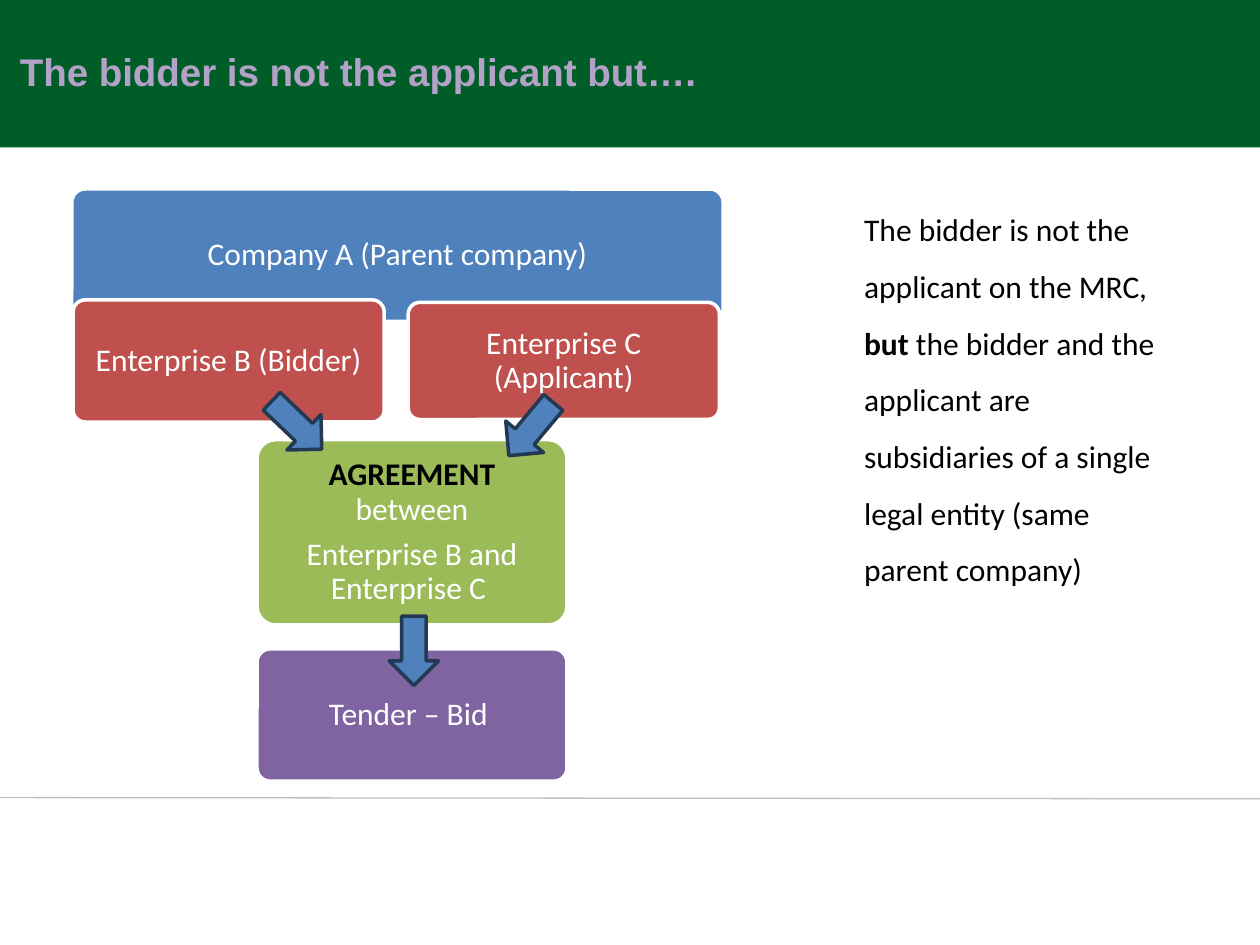
from dataclasses import dataclass

from lxml import etree
from pptx import Presentation
from pptx.dml.color import RGBColor
from pptx.enum.shapes import MSO_CONNECTOR, MSO_SHAPE
from pptx.enum.text import MSO_ANCHOR, MSO_AUTO_SIZE, PP_ALIGN
from pptx.oxml.ns import qn
from pptx.util import Inches, Pt


@dataclass(frozen=True)
class Theme:
    banner: str = "005D28"
    title: str = "B3A2C7"
    rule: str = "BFBFBF"
    black: str = "000000"
    white: str = "FFFFFF"
    parent: str = "4F81BD"
    enterprise: str = "C0504D"
    agreement: str = "9BBB59"
    bid: str = "8064A2"
    arrow_line: str = "233953"
    title_font: str = "Arial"
    body_font: str = "Calibri"
    title_size: float = 22
    body_size: float = 18
    outline: float = 2
    rule_width: float = 0.75


def rgb(value):
    return RGBColor.from_string(value)


class SlideBuilder:
    def __init__(self, slide, theme):
        self.slide = slide
        self.theme = theme

    def shape(self, kind, at, fill, line=None):
        sp = self.slide.shapes.add_shape(kind, *map(Inches, at))
        sp.shadow.inherit = False
        sp.fill.solid()
        sp.fill.fore_color.rgb = rgb(fill)
        if line:
            sp.line.color.rgb = rgb(line)
            sp.line.width = Pt(self.theme.outline)
        else:
            sp.line.fill.background()
        return sp

    def rule(self, start, end):
        line = self.slide.shapes.add_connector(
            MSO_CONNECTOR.STRAIGHT, *map(Inches, start + end))
        line.line.color.rgb = rgb(self.theme.rule)
        line.line.width = Pt(self.theme.rule_width)
        etree.SubElement(line._element.spPr, qn("a:effectLst"))

    def style(self, p, font, size, color):
        p.font.name = font
        p.font.size = Pt(size)
        p.font.color.rgb = rgb(color)

    def runs(self, p, parts):
        for text, bold, color in parts:
            r = p.add_run()
            r.text = text
            if bold:
                r.font.bold = True
            if color:
                r.font.color.rgb = rgb(color)

    def text(self, at, parts, font, size, color, spacing=1.0):
        sp = self.slide.shapes.add_textbox(*map(Inches, at))
        tf = sp.text_frame
        tf.word_wrap = True
        tf.auto_size = MSO_AUTO_SIZE.SHAPE_TO_FIT_TEXT
        p = tf.paragraphs[0]
        p._p.get_or_add_pPr().set("marL", str(Inches(0.5)))
        p.line_spacing = spacing
        self.style(p, font, size, color)
        self.runs(p, parts)

    def box(self, at, fill, *paragraphs):
        theme = self.theme
        sp = self.shape(MSO_SHAPE.ROUNDED_RECTANGLE, at, fill, theme.white)
        sp.adjustments[0] = 0.1
        tf = sp.text_frame
        tf.word_wrap = True
        tf.vertical_anchor = MSO_ANCHOR.MIDDLE
        tf.margin_left = tf.margin_right = Inches(0.07)
        tf.margin_top = tf.margin_bottom = Inches(0.07)
        for i, parts in enumerate(paragraphs):
            p = tf.add_paragraph() if i else tf.paragraphs[0]
            p.alignment = PP_ALIGN.CENTER
            p.line_spacing = 0.9
            p.space_after = Pt(0.35 * theme.body_size)
            self.style(p, theme.body_font, theme.body_size, theme.white)
            self.runs(p, parts)

    def arrow(self, left, top, angle):
        sp = self.shape(MSO_SHAPE.RIGHT_ARROW, (left, top, 0.55, 0.39),
                        self.theme.parent, self.theme.arrow_line)
        sp.rotation = angle


def main():
    prs = Presentation()
    prs.slide_width, prs.slide_height = Inches(10), Inches(7.5)
    theme = Theme()
    s = SlideBuilder(prs.slides.add_slide(prs.slide_layouts[6]), theme)

    s.shape(MSO_SHAPE.RECTANGLE, (0, 0, 10, 1.17), theme.banner)
    s.rule((0, 6.33), (10, 6.34))
    s.text((6.26, 1.47, 3.15, 3.23), [
        ("The bidder is not the applicant on the MRC, ", False, None),
        ("but ", True, None),
        ("the bidder and the applicant are subsidiaries of a single "
         "legal entity (same parent company)", False, None),
    ], theme.body_font, theme.body_size, theme.black, 1.5)
    s.text((-0.44, 0.33, 8.31, 0.47),
           [("The bidder is not the applicant but….", True, None)],
           theme.title_font, theme.title_size, theme.title)

    s.box((0.57, 1.5, 5.17, 1.05), theme.parent,
          [("Company A (Parent company)", False, None)])
    s.box((0.58, 2.38, 2.47, 0.97), theme.enterprise,
          [("Enterprise B (Bidder)", False, None)])
    s.box((2.04, 3.49, 2.46, 1.47), theme.agreement,
          [("AGREEMENT ", True, theme.black), ("between", False, None)],
          [("Enterprise B and Enterprise C ", False, None)])
    s.box((2.04, 5.15, 2.46, 1.05), theme.bid,
          [("Tender – Bid ", False, None)])
    s.box((3.24, 2.4, 2.47, 0.93), theme.enterprise,
          [("Enterprise C (Applicant)", False, None)])

    for left, top, angle in [(2.08, 3.18, 43.7), (3.94, 3.21, 129.9),
                             (3.01, 4.97, 90)]:
        s.arrow(left, top, angle)

    prs.save("out.pptx")


if __name__ == "__main__":
    main()
